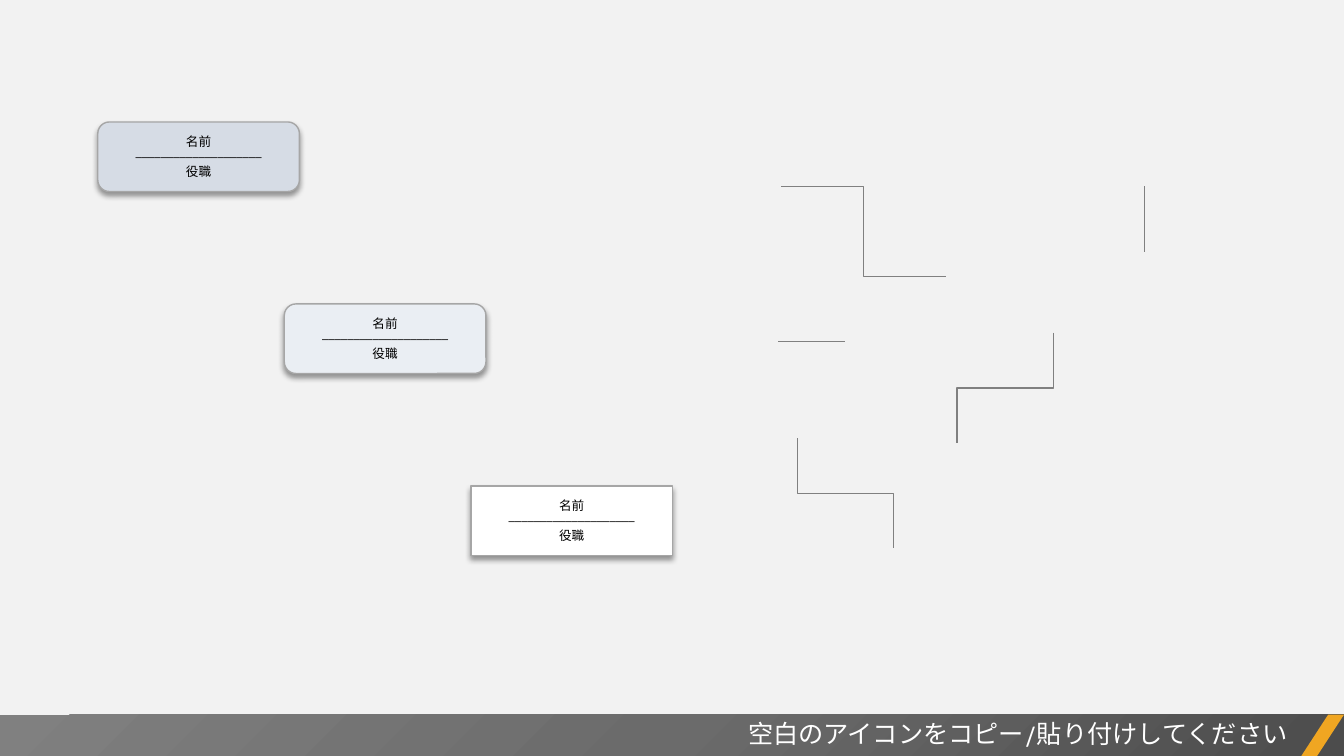
from lxml import etree
from pptx import Presentation
from pptx.dml.color import RGBColor
from pptx.enum.shapes import MSO_CONNECTOR, MSO_SHAPE
from pptx.enum.text import MSO_ANCHOR, MSO_AUTO_SIZE, PP_ALIGN
from pptx.oxml import parse_xml
from pptx.oxml.ns import nsdecls, qn
from pptx.util import Inches, Pt

RECTANGLE = MSO_SHAPE.RECTANGLE
ROUNDED = MSO_SHAPE.FLOWCHART_ALTERNATE_PROCESS
PARALLELOGRAM = MSO_SHAPE.PARALLELOGRAM
STRAIGHT = MSO_CONNECTOR.STRAIGHT
ELBOW = MSO_CONNECTOR.ELBOW
TOP, MIDDLE = MSO_ANCHOR.TOP, MSO_ANCHOR.MIDDLE
CENTER, RIGHT = PP_ALIGN.CENTER, PP_ALIGN.RIGHT
GROW = MSO_AUTO_SIZE.SHAPE_TO_FIT_TEXT

FONT = "TeX Gyre Adventor"
BACKGROUND = RGBColor(0xF2, 0xF2, 0xF2)
WHITE = RGBColor(0xFF, 0xFF, 0xFF)
BLACK = RGBColor(0, 0, 0)
ORANGE = RGBColor(0xF0, 0xA6, 0x22)
BLUE_GREY = RGBColor(0xD6, 0xDC, 0xE5)
PALE_BLUE = RGBColor(0xEA, 0xEE, 0xF3)
BORDER = RGBColor(0xA6, 0xA6, 0xA6)
LINE_GREY = RGBColor(0x80, 0x80, 0x80)
BAR_STOPS = [
    (0, RGBColor(0x4C, 0x4C, 0x4C)),
    (50, RGBColor(0x6B, 0x6B, 0x6B)),
    (100, RGBColor(0x80, 0x80, 0x80)),
]

WIDTH, HEIGHT = 13.33, 7.5
BAR_TOP, BAR_HEIGHT = 7.09, 0.42
CARD_WIDTH, CARD_HEIGHT = 2, 0.69
CARD_LEFT, CARD_TOP = 0.97, 1.21
CARD_STEP_X, CARD_STEP_Y = 1.85, 1.805
CARD_LINES = ["名前", "–" * 20, "役職"]
CARD_STYLES = [(ROUNDED, BLUE_GREY), (ROUNDED, PALE_BLUE), (RECTANGLE, WHITE)]


def write_text(frame, lines, *, size, color, align, anchor, inset=None):
    frame.word_wrap = True
    frame.vertical_anchor = anchor
    if inset is not None:
        frame.margin_left = frame.margin_right = Inches(inset)
        frame.margin_top = frame.margin_bottom = Inches(inset)
    for index, line in enumerate(lines):
        para = frame.add_paragraph() if index else frame.paragraphs[0]
        para.alignment = align
        span = para.add_run()
        span.text = line
        span.font.name = FONT
        span.font.size = Pt(size)
        span.font.color.rgb = color


def add_box(page, kind, left, top, width, height, fill, border=None):
    box = page.shapes.add_shape(
        kind, Inches(left), Inches(top), Inches(width), Inches(height)
    )
    box.shadow.inherit = False
    box.fill.solid()
    box.fill.fore_color.rgb = fill
    if border is None:
        box.line.fill.background()
    else:
        box.line.color.rgb = border
        box.line.width = Pt(1)
    return box


def set_corner_gradient(box, stops):
    stop_xml = "".join(
        f'<a:gs pos="{position * 1000}"><a:srgbClr val="{color}"/></a:gs>'
        for position, color in stops
    )
    gradient = parse_xml(
        f'<a:gradFill {nsdecls("a")} rotWithShape="1"><a:gsLst>{stop_xml}</a:gsLst>'
        '<a:path path="circle"><a:fillToRect l="100000" t="100000"/></a:path>'
        "</a:gradFill>"
    )
    properties = box.element.spPr
    properties.replace(properties.find(qn("a:solidFill")), gradient)


def add_drop_shadow(box):
    effects = box.element.spPr.find(qn("a:effectLst"))
    effects.append(parse_xml(
        f'<a:outerShdw {nsdecls("a")} blurRad="{Pt(4)}" dist="{Pt(3)}" '
        'dir="5400000" algn="t" rotWithShape="0">'
        f'<a:srgbClr val="{BLACK}"><a:alpha val="40000"/></a:srgbClr></a:outerShdw>'
    ))


def add_card(page, kind, left, top, fill):
    card = add_box(page, kind, left, top, CARD_WIDTH, CARD_HEIGHT, fill, BORDER)
    add_drop_shadow(card)
    write_text(card.text_frame, CARD_LINES, size=9, color=BLACK,
               align=CENTER, anchor=MIDDLE, inset=0.02)


def add_line(page, kind, start, end):
    line = page.shapes.add_connector(
        kind, *(Inches(value) for value in (*start, *end))
    )
    line.line.color.rgb = LINE_GREY
    line.line.width = Pt(1)
    etree.SubElement(line.element.spPr, qn("a:effectLst"))
    return line


def add_upright_elbow(page, start, end):
    center_x, center_y = (start[0] + end[0]) / 2, (start[1] + end[1]) / 2
    half_width = (end[1] - start[1]) / 2
    half_height = abs(end[0] - start[0]) / 2
    goes_left = end[0] < start[0]
    side = -half_width if goes_left else half_width
    line = add_line(page, ELBOW,
                    (center_x + side, center_y - half_height),
                    (center_x - side, center_y + half_height))
    degrees = 90 if goes_left else 270
    line.element.spPr.find(qn("a:xfrm")).set("rot", str(degrees * 60000))


def add_footer(page):
    bar = add_box(page, RECTANGLE, 0, BAR_TOP, WIDTH, BAR_HEIGHT, LINE_GREY)
    set_corner_gradient(bar, BAR_STOPS)
    accent = add_box(page, PARALLELOGRAM, 12.9, BAR_TOP, 0.43, BAR_HEIGHT, ORANGE)
    accent.adjustments[0] = 0.65

    title = page.shapes.title
    title.left, title.top = Inches(5.25), Inches(7.08)
    title.width, title.height = Inches(7.62), Inches(0.4)
    write_text(title.text_frame, ["空白のアイコンをコピー/貼り付けしてください"],
               size=18, color=WHITE, align=RIGHT, anchor=TOP)
    title.text_frame.auto_size = GROW
    title.element.getparent().append(title.element)


def main():
    deck = Presentation()
    deck.slide_width, deck.slide_height = Inches(WIDTH), Inches(HEIGHT)
    page = deck.slides.add_slide(deck.slide_layouts.get_by_name("Title Only"))
    page.background.fill.solid()
    page.background.fill.fore_color.rgb = BACKGROUND

    add_footer(page)

    add_line(page, ELBOW, (7.75, 1.85), (9.38, 2.74))
    add_line(page, STRAIGHT, (7.72, 3.39), (8.38, 3.39))
    add_line(page, STRAIGHT, (11.35, 1.85), (11.35, 2.5))
    add_upright_elbow(page, (10.45, 3.3), (9.49, 4.4))
    add_upright_elbow(page, (7.91, 4.35), (8.86, 5.44))

    for index, (kind, fill) in enumerate(CARD_STYLES):
        add_card(page, kind, CARD_LEFT + index * CARD_STEP_X,
                 CARD_TOP + index * CARD_STEP_Y, fill)

    deck.save("out.pptx")


if __name__ == "__main__":
    main()
